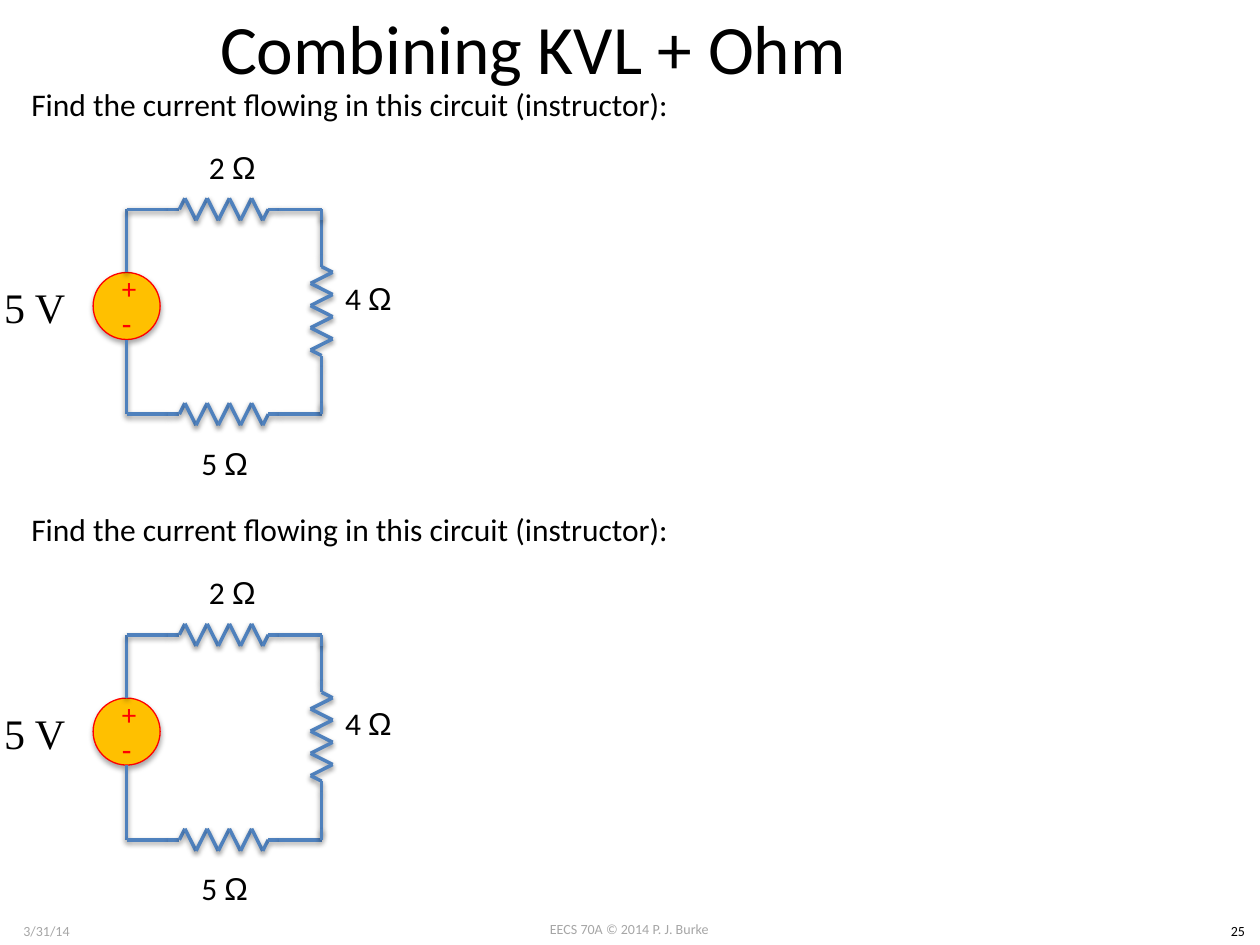
from dataclasses import dataclass
from itertools import pairwise

from lxml import etree
from pptx import Presentation
from pptx.dml.color import RGBColor
from pptx.enum import shapes, text
from pptx.oxml import ns
from pptx.util import Pt


@dataclass(frozen=True)
class Theme:
    body: str = "Calibri"
    serif: str = "Times New Roman"
    symbol: str = "Arial"
    black: RGBColor = RGBColor(0, 0, 0)
    gray: RGBColor = RGBColor(0xA6, 0xA6, 0xA6)
    wire: RGBColor = RGBColor(0x4F, 0x81, 0xBD)
    red: RGBColor = RGBColor(0xFF, 0, 0)
    amber: RGBColor = RGBColor(0xFF, 0xC0, 0)
    title_size: float = 39.6
    text_size: float = 18
    plus_size: float = 16.6
    source_size: float = 24
    footer_size: float = 8


theme = Theme()
LEFT, CENTER = text.PP_ALIGN.LEFT, text.PP_ALIGN.CENTER


def add_text(parent, box, words, size, color=theme.black, font=theme.body,
             align=LEFT, wrap=False, middle=False):
    """Add a one-line text box; an Ω is set in the symbol font."""
    frame = parent.add_textbox(*map(Pt, box)).text_frame
    frame.word_wrap = wrap
    if middle:
        frame.vertical_anchor = text.MSO_ANCHOR.MIDDLE
    else:
        frame.auto_size = text.MSO_AUTO_SIZE.SHAPE_TO_FIT_TEXT
    paragraph = frame.paragraphs[0]
    paragraph.alignment = align
    number, omega, _ = words.partition("Ω")
    for part, name in ((number, font), (omega, theme.symbol)):
        if part:
            run = paragraph.add_run()
            run.text = part
            run.font.name = name
            run.font.size = Pt(size)
            run.font.color.rgb = color


def add_shadow(shape, opacity, distance):
    """Give a shape or connector a soft shadow straight below it."""
    properties = shape._element.spPr
    effects = etree.SubElement(properties, ns.qn("a:effectLst"))
    shadow = etree.SubElement(
        effects, ns.qn("a:outerShdw"), blurRad=str(Pt(3.1)),
        dist=str(Pt(distance)), dir="5400000", rotWithShape="0")
    color = etree.SubElement(shadow, ns.qn("a:srgbClr"), val="000000")
    etree.SubElement(color, ns.qn("a:alpha"), val=str(opacity * 1000))


presentation = Presentation()
presentation.slide_width, presentation.slide_height = Pt(720), Pt(540)
slide = presentation.slides.add_slide(presentation.slide_layouts[5])

# Title
title = slide.shapes.title
title.left, title.top, title.width, title.height = map(Pt, (59.8, 0, 489.6, 54))
title.text_frame.text = "Combining KVL + Ohm"
title.text_frame.vertical_anchor = text.MSO_ANCHOR.MIDDLE
paragraph = title.text_frame.paragraphs[0]
paragraph.alignment = CENTER
paragraph.font.name = theme.body
paragraph.font.size = Pt(theme.title_size)
paragraph.font.color.rgb = theme.black

# Footer
for box, words, color in (
    ((275.8, 522.7, 167.8, 17), "EECS 70A © 2014 P. J. Burke", theme.gray),
    ((0, 523.4, 53.3, 17), "3/31/14", theme.gray),
    ((694.8, 523.4, 25.2, 17), "25", theme.black),
):
    add_text(slide.shapes, box, words, theme.footer_size, color,
             align=CENTER, wrap=True)

# Circuit geometry, measured from the top of the slide
LEFT_X, RIGHT_X, TOP_Y, BOTTOM_Y = 72.4, 183.8, 119.6, 236.7
RESISTOR_X, RESISTOR_Y = 127.9, 177.8
PEAK, PITCH = 6.3, 6.35

# A resistor as (distance along, offset across) from its middle
zigzag = [((i - 3.5) * PITCH, PEAK * (-1) ** i) for i in range(8)]
resistor = [(-31.8, 0), (-25.4, 0), *zigzag, (25.4, 0), (31.8, 0)]

# Chains of points joined by wire
chains = [
    [(LEFT_X, BOTTOM_Y), (LEFT_X, 194.2)],
    [(LEFT_X, 155.6), (LEFT_X, TOP_Y)],
]
for y in (TOP_Y, BOTTOM_Y):
    chains.append([(LEFT_X, y),
                   *((RESISTOR_X + along, y - across) for along, across in resistor),
                   (RIGHT_X, y)])
chains.append([(RIGHT_X, TOP_Y + 2.9),
               *((RIGHT_X + across, RESISTOR_Y + along) for along, across in resistor),
               (RIGHT_X, BOTTOM_Y - 2.9)])
for corner, step in ((TOP_Y, 6.3), (BOTTOM_Y, -6.3)):
    chains.append([(RIGHT_X, corner + step), (RIGHT_X, corner)])

# The same circuit twice, one below the other
for shift in (0, 243.2):
    circuit = slide.shapes.add_group_shape().shapes
    add_text(circuit, (10.8, 44.8 + shift, 383, 29),
             "Find the current flowing in this circuit (instructor):",
             theme.text_size)

    # Voltage source
    add_text(circuit, (-23, 149.2 + shift, 85.7, 52.6), "5 V", theme.source_size,
             font=theme.serif, align=CENTER, wrap=True, middle=True)
    source = circuit.add_shape(shapes.MSO_SHAPE.OVAL,
                               *map(Pt, (53.2, 155.7 + shift, 38.3, 38.3)))
    source.fill.solid()
    source.fill.fore_color.rgb = theme.amber
    source.line.color.rgb = theme.red
    source.line.width = Pt(0.75)
    add_shadow(source, 35, 1.8)
    for sign, y, size in (("+", 152.6, theme.plus_size), ("-", 172.8, theme.text_size)):
        add_text(circuit, (62.6, y + shift, 18.7, 23.8), sign, size, theme.red,
                 align=CENTER, wrap=True, middle=True)

    # Wires and resistors
    for chain in chains:
        for (x1, y1), (x2, y2) in pairwise(chain):
            wire = circuit.add_connector(
                shapes.MSO_CONNECTOR.STRAIGHT,
                Pt(x1), Pt(y1 + shift), Pt(x2), Pt(y2 + shift))
            wire.line.color.rgb = theme.wire
            wire.line.width = Pt(2)
            add_shadow(wire, 38, 1.6)

    # Resistor values
    for words, x, y in (("2 Ω", 112.3, 80.8), ("4 Ω", 190.1, 155.8), ("5 Ω", 108, 250)):
        add_text(circuit, (x, y + shift, 41.8, 29), words, theme.text_size)

presentation.save("out.pptx")
